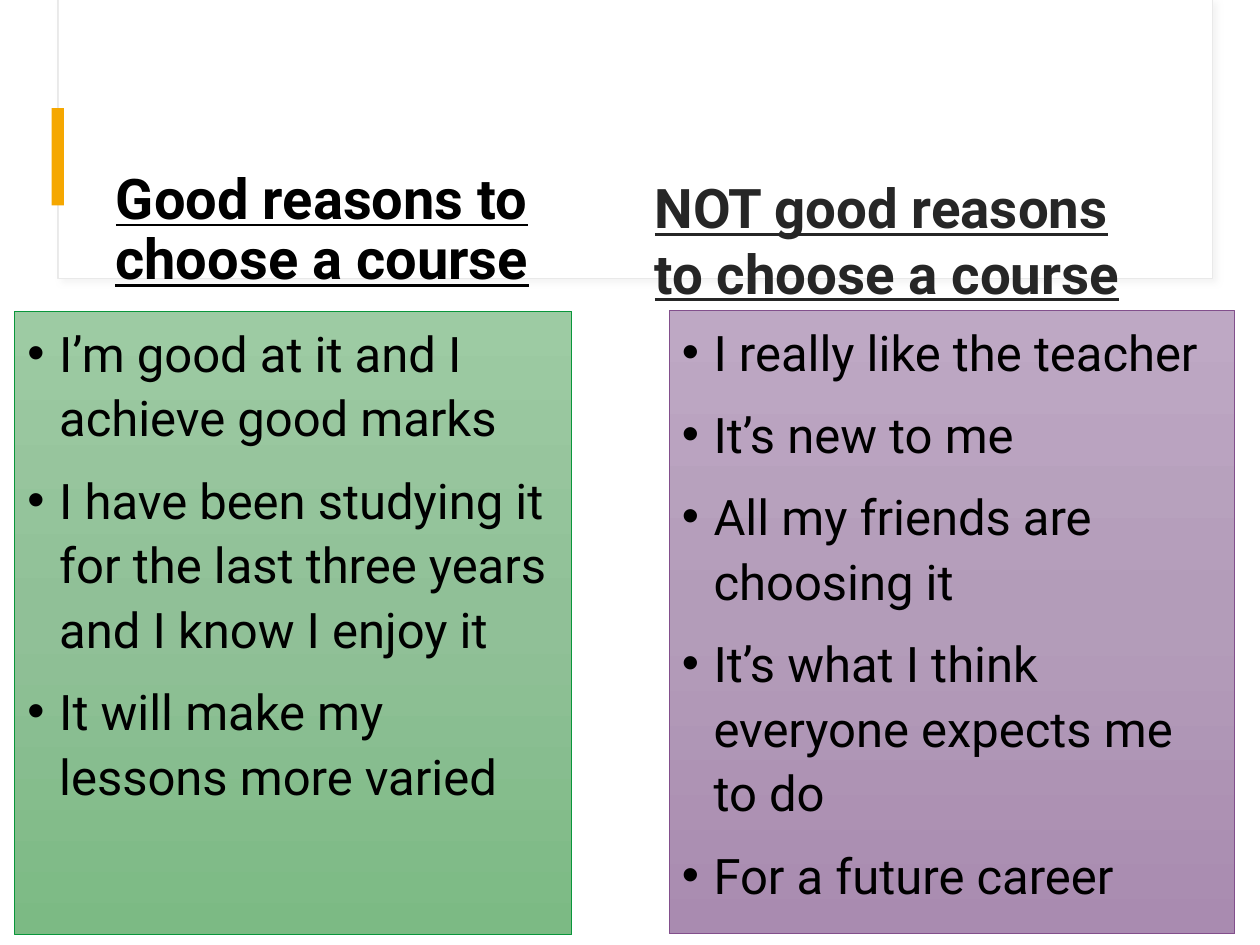
from copy import deepcopy
from dataclasses import dataclass

from lxml.etree import SubElement
from pptx import Presentation
from pptx.dml.color import RGBColor
from pptx.enum.shapes import MSO_SHAPE as Shape
from pptx.enum.text import MSO_ANCHOR as Anchor, MSO_AUTO_SIZE as AutoSize, PP_ALIGN as Align
from pptx.oxml.ns import qn
from pptx.util import Cm, Pt


@dataclass(frozen=True)
class Theme:
    font: str = "Roboto"
    black: str = "000000"
    charcoal: str = "262626"
    white: str = "FFFFFF"
    frame_line: str = "E9E9E9"
    shadow: str = "D9D9D9"
    accent: str = "F5A700"
    green: tuple = ("9DCBA3", "90C097", "7CBA84")
    green_line: str = "09963B"
    purple: tuple = ("BEA8C4", "B39CB9", "A98BB0")
    purple_line: str = "824F8C"
    title_size: float = 32
    heading_size: float = 31.2
    list_size: float = 28


THEME = Theme()
GOOD_REASONS = [
    "I’m good at it and I achieve good marks",
    "I have been studying it for the last three years and I know I enjoy it",
    "It will make my lessons more varied",
]
POOR_REASONS = [
    "I really like the teacher",
    "It’s new to me",
    "All my friends are choosing it",
    "It’s what I think everyone expects me to do",
    "For a future career",
]


def set_all(target, values):
    for name, value in values.items():
        setattr(target, name, value)


def place(shape, box):
    set_all(shape, dict(zip(("left", "top", "width", "height"), map(Cm, box))))


def add_span(para, text, size, color, **style):
    span = para.add_run()
    span.text = text
    set_all(span.font, {"name": THEME.font, "size": Pt(size), **style})
    span.font.color.rgb = RGBColor.from_string(color)


def add_block(page, box, color):
    block = page.shapes.add_shape(Shape.RECTANGLE, *map(Cm, box))
    block.shadow.inherit = False
    block.fill.solid()
    block.fill.fore_color.rgb = RGBColor.from_string(color)
    block.line.fill.background()
    return block


def add_soft_shadow(shape):
    effects = shape._element.spPr.find(qn("a:effectLst"))
    shadow = SubElement(effects, qn("a:outerShdw"), blurRad=str(Pt(4)), dist=str(Pt(3)),
                        dir=str(45 * 60000), algn="tl", rotWithShape="0")
    color = SubElement(shadow, qn("a:srgbClr"), val=THEME.shadow)
    SubElement(color, qn("a:alpha"), val="30000")


def add_header_frame(page, box):
    """Draw the shadowed header panel and the accent bar on its left edge."""
    left, top, width, height = box
    frame = add_block(page, box, THEME.white)
    frame.line.color.rgb = RGBColor.from_string(THEME.frame_line)
    frame.line.width = Pt(0.75)
    add_soft_shadow(frame)
    add_block(page, (left + 0.02, top, width - 0.03, height - 0.02), THEME.white)
    add_block(page, (left - 0.13, top + 2.18, 0.25, 1.96), THEME.accent)


def fill_heading(shape, box, text, size, color, **layout):
    place(shape, box)
    set_all(shape.text_frame, {"word_wrap": True, "auto_size": AutoSize.NONE,
                               "vertical_anchor": Anchor.MIDDLE})
    para = shape.text_frame.paragraphs[0]
    set_all(para, layout)
    add_span(para, text, size, color, bold=True, underline=True)


def fill_gradient(shape, colors):
    shape.fill.gradient()
    shape.fill.gradient_angle = 270
    stops = shape._element.spPr.find(".//" + qn("a:gsLst"))
    stops.append(deepcopy(stops[-1]))
    for stop, position, color in zip(shape.fill.gradient_stops, (0, 0.5, 1), colors):
        stop.position = position
        stop.color.rgb = RGBColor.from_string(color)


def fill_reasons(shape, box, reasons, colors, line_color, hanging):
    place(shape, box)
    fill_gradient(shape, colors)
    shape.line.color.rgb = RGBColor.from_string(line_color)
    shape.line.width = Pt(0.5)
    frame = shape.text_frame
    set_all(frame, {"word_wrap": True, "auto_size": AutoSize.NONE,
                    "vertical_anchor": Anchor.TOP})
    for index, reason in enumerate(reasons):
        para = frame.add_paragraph() if index else frame.paragraphs[0]
        set_all(para, {"line_spacing": 1.1, "space_before": Pt(10 if index else 0),
                       "space_after": Pt(0), "alignment": Align.LEFT})
        properties = para._p.get_or_add_pPr()
        properties.set("marL", str(Cm(0.64)))
        properties.set("indent", str(-Cm(hanging)))
        SubElement(properties, qn("a:buFont"), typeface="Arial")
        SubElement(properties, qn("a:buChar"), char="•")
        add_span(para, reason, THEME.list_size, THEME.black)


def build_comparison(deck):
    page = deck.slides.add_slide(deck.slide_layouts.get_by_name("Two Content"))
    title, good, poor = page.placeholders
    add_header_frame(page, (1.17, 0, 23.27, 5.61))
    for holder in (title, good, poor):
        page.shapes._spTree.append(holder._element)  # bring in front of the frame

    fill_heading(title, (1.27, 3.18, 10.44, 2.97), "Good reasons to choose a course",
                 THEME.title_size, THEME.black, alignment=Align.CENTER, line_spacing=0.9)
    fill_reasons(good, (0.3, 6.27, 11.23, 12.57), GOOD_REASONS,
                 THEME.green, THEME.green_line, 0.71)
    fill_reasons(poor, (13.49, 6.25, 11.4, 12.57), POOR_REASONS,
                 THEME.purple, THEME.purple_line, 0.64)
    box = (12.95, 3.35, 10.44, 2.97)
    heading = page.shapes.add_textbox(*map(Cm, box))
    fill_heading(heading, box, "NOT good reasons to choose a course",
                 THEME.heading_size, THEME.charcoal, alignment=Align.LEFT)


def main():
    deck = Presentation()
    set_all(deck, {"slide_width": Cm(25.4), "slide_height": Cm(19.05)})
    build_comparison(deck)
    deck.save("out.pptx")


if __name__ == "__main__":
    main()
